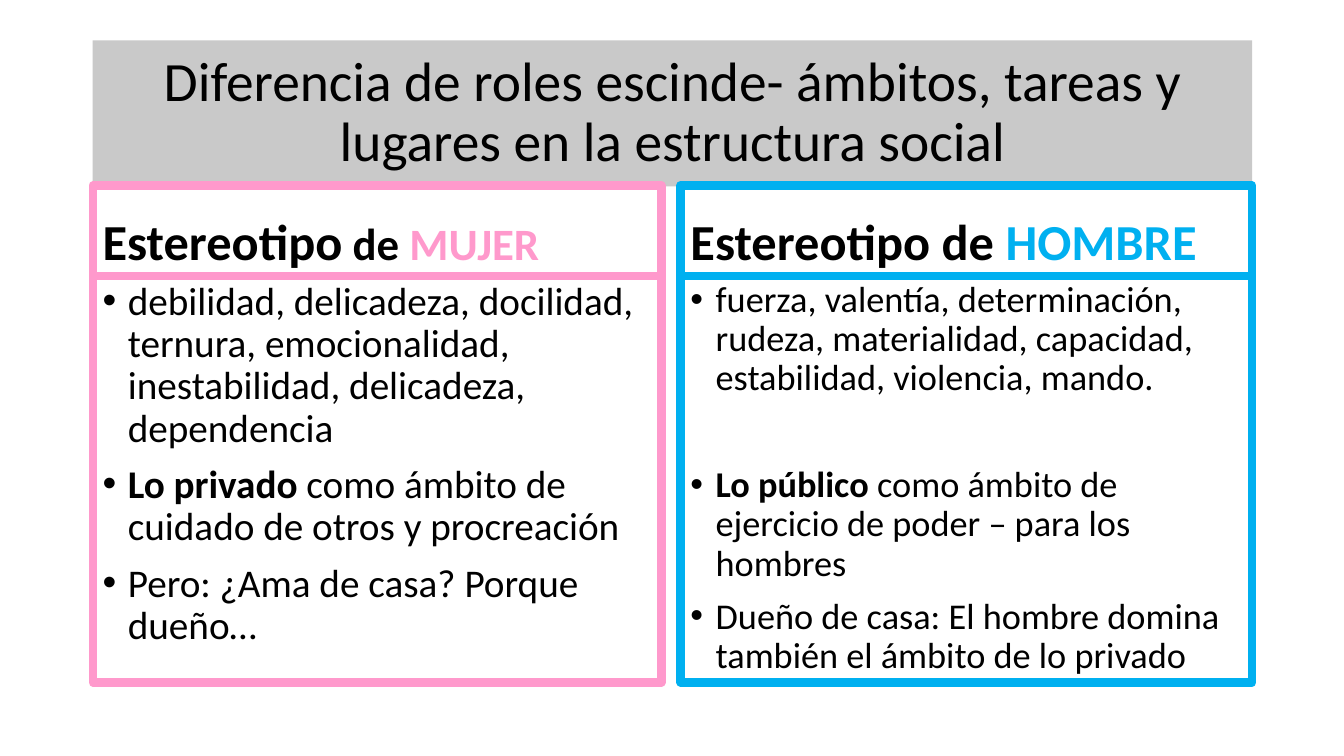
import pptx
import pptx.dml.color
import pptx.enum.shapes
import pptx.enum.text
import pptx.oxml.ns
import pptx.util
import lxml.etree
from dataclasses import dataclass

Inches = pptx.util.Inches
Pt = pptx.util.Pt
Align = pptx.enum.text.PP_ALIGN
Anchor = pptx.enum.text.MSO_ANCHOR


def rgb(value):
    return pptx.dml.color.RGBColor.from_string(value)


def apply(target, values):
    for key, value in values.items():
        setattr(target, key, value)


@dataclass(frozen=True)
class Theme:
    font: str = "Calibri"
    ink: str = "000000"
    banner: str = "C9C9C9"
    woman: str = "FF99CC"
    man: str = "00B0F0"
    title_size: float = 39.6
    heading_size: float = 36
    small_heading_size: float = 32
    woman_size: float = 28
    man_size: float = 25.9
    border: float = 6
    line_spacing: float = 0.9
    paragraph_gap: float = 10
    wide_gap: float = 48.4
    indent: float = 0.25


class SlideBuilder:
    def __init__(self, slide, theme):
        self.slide = slide
        self.theme = theme

    def box(self, bounds, anchor, fill=None, border=None):
        box = self.slide.shapes.add_shape(
            pptx.enum.shapes.MSO_SHAPE.RECTANGLE, *map(Inches, bounds))
        box.shadow.inherit = False
        if fill:
            box.fill.solid()
            box.fill.fore_color.rgb = rgb(fill)
        else:
            box.fill.background()
        if border:
            box.line.color.rgb = rgb(border)
            box.line.width = Pt(self.theme.border)
        else:
            box.line.fill.background()
        apply(box.text_frame, {"word_wrap": True, "vertical_anchor": anchor})
        return box.text_frame

    def fill_paragraph(self, paragraph, runs, align=Align.LEFT, gap=0):
        apply(paragraph, {"alignment": align, "space_before": Pt(gap),
                          "line_spacing": self.theme.line_spacing})
        for text, size, bold, color in runs:
            run = paragraph.add_run()
            run.text = text
            apply(run.font, {"name": self.theme.font, "size": Pt(size), "bold": bold})
            run.font.color.rgb = rgb(color)

    def bullet(self, paragraph):
        properties = paragraph._p.get_or_add_pPr()
        indent = Inches(self.theme.indent)
        properties.set("marL", str(indent))
        properties.set("indent", str(-indent))
        qn = pptx.oxml.ns.qn
        lxml.etree.SubElement(properties, qn("a:buFont"), typeface="Arial")
        lxml.etree.SubElement(properties, qn("a:buChar"), char="•")

    def title(self, bounds, text):
        frame = self.box(bounds, Anchor.MIDDLE, fill=self.theme.banner)
        run = (text, self.theme.title_size, False, self.theme.ink)
        self.fill_paragraph(frame.paragraphs[0], [run], Align.CENTER)

    def heading(self, bounds, runs, color):
        frame = self.box(bounds, Anchor.BOTTOM, border=color)
        self.fill_paragraph(frame.paragraphs[0], runs, gap=self.theme.paragraph_gap)

    def traits(self, bounds, items, size, color):
        frame = self.box(bounds, Anchor.TOP, border=color)
        for index, (lead, text, gap) in enumerate(items):
            paragraph = frame.add_paragraph() if index else frame.paragraphs[0]
            parts = [(lead, size, True, self.theme.ink), (text, size, False, self.theme.ink)]
            self.fill_paragraph(paragraph, [part for part in parts if part[0]], gap=gap)
            self.bullet(paragraph)


def main():
    theme = Theme()
    deck = pptx.Presentation()
    apply(deck, {"slide_width": Inches(13.33), "slide_height": Inches(7.5)})
    builder = SlideBuilder(deck.slides.add_slide(deck.slide_layouts[6]), theme)
    gap = theme.paragraph_gap

    builder.title((0.92, 0.4, 11.5, 1.45),
                  "Diferencia de roles escinde- ámbitos, tareas y lugares en la estructura social")

    stereotypes = [
        (0.92, 5.64, theme.woman, theme.woman_size,
         [("Estereotipo", theme.heading_size, True, theme.ink),
          (" de ", theme.small_heading_size, True, theme.ink),
          ("MUJER", theme.small_heading_size, True, theme.woman)],
         [("", "debilidad, delicadeza, docilidad, ternura, emocionalidad, "
               "inestabilidad, delicadeza, dependencia", gap),
          ("Lo privado", " como ámbito de cuidado de otros y procreación", gap),
          ("", "Pero: ¿Ama de casa? Porque dueño…", gap)]),
        (6.75, 5.67, theme.man, theme.man_size,
         [("Estereotipo de ", theme.heading_size, True, theme.ink),
          ("HOMBRE", theme.heading_size, True, theme.man)],
         [("", "fuerza, valentía, determinación, rudeza, materialidad, "
               "capacidad, estabilidad, violencia, mando.", gap),
          ("Lo público ", "como ámbito de ejercicio de poder – para los hombres",
           theme.wide_gap),
          ("", "Dueño de casa: El hombre domina también el ámbito de lo privado", gap)]),
    ]
    for left, width, color, size, heading, traits in stereotypes:
        builder.heading((left, 1.84, width, 0.9), heading, color)
        builder.traits((left, 2.74, width, 4.03), traits, size, color)

    deck.save("out.pptx")


if __name__ == "__main__":
    main()
